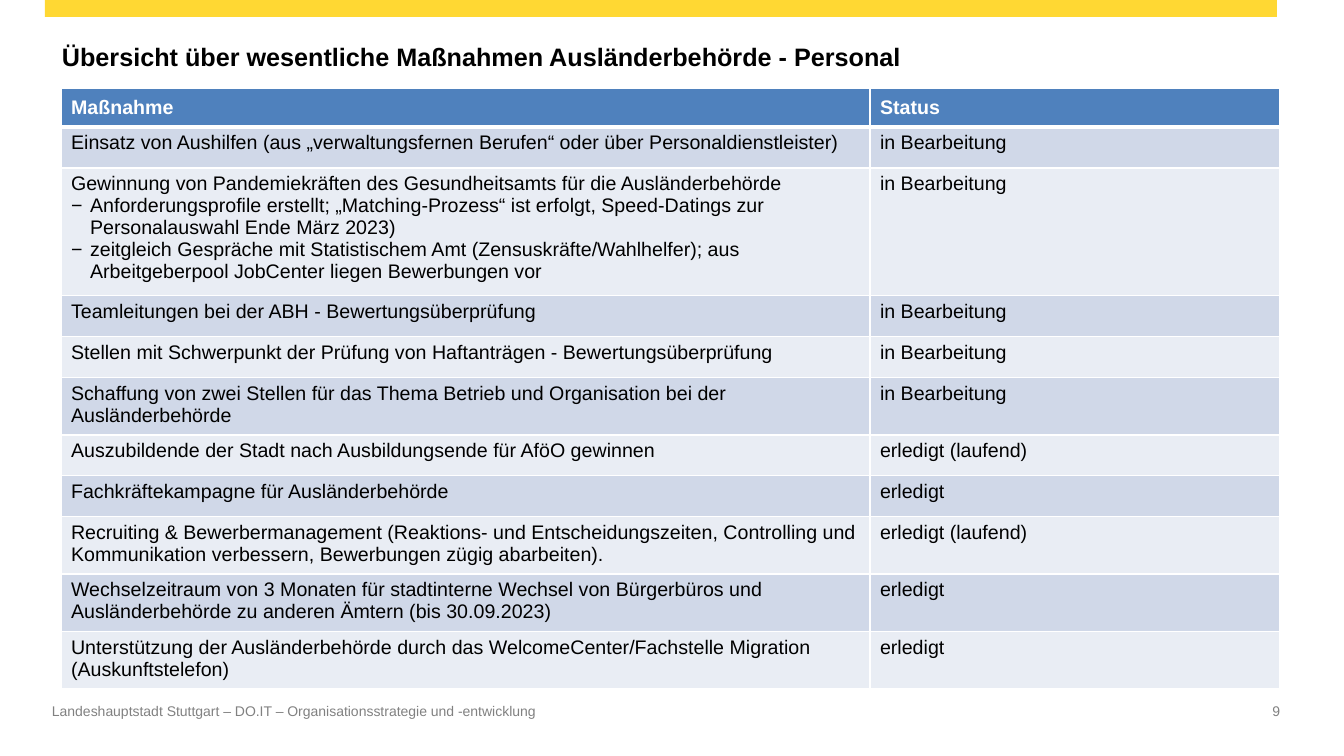
"""Build the slide with the overview of staffing measures."""
from dataclasses import dataclass

from lxml import etree
from pptx import Presentation
from pptx import util as u
from pptx.dml.color import RGBColor
from pptx.enum import shapes, text
from pptx.oxml import ns

PX = 914400 / 100.8
ROW_H = 41
HEADER = ("Maßnahme", "Status")
OPEN, DONE, ONGOING = "in Bearbeitung", "erledigt", "erledigt (laufend)"
MEASURES = [
    ("Einsatz von Aushilfen (aus „verwaltungsfernen Berufen“ oder über Personaldienstleister)", OPEN),
    ("Gewinnung von Pandemiekräften des Gesundheitsamts für die Ausländerbehörde\n"
     "Anforderungsprofile erstellt; „Matching-Prozess“ ist erfolgt, Speed-Datings zur "
     "Personalauswahl Ende März 2023)\n"
     "zeitgleich Gespräche mit Statistischem Amt (Zensuskräfte/Wahlhelfer); aus "
     "Arbeitgeberpool JobCenter liegen Bewerbungen vor", OPEN),
    ("Teamleitungen bei der ABH - Bewertungsüberprüfung", OPEN),
    ("Stellen mit Schwerpunkt der Prüfung von Haftanträgen - Bewertungsüberprüfung", OPEN),
    ("Schaffung von zwei Stellen für das Thema Betrieb und Organisation bei der "
     "Ausländerbehörde", OPEN),
    ("Auszubildende der Stadt nach Ausbildungsende für AföO gewinnen", ONGOING),
    ("Fachkräftekampagne für Ausländerbehörde", DONE),
    ("Recruiting & Bewerbermanagement (Reaktions- und Entscheidungszeiten, Controlling und "
     "Kommunikation verbessern, Bewerbungen zügig abarbeiten).", ONGOING),
    ("Wechselzeitraum von 3 Monaten für stadtinterne Wechsel von Bürgerbüros und "
     "Ausländerbehörde zu anderen Ämtern (bis 30.09.2023)", DONE),
    ("Unterstützung der Ausländerbehörde durch das WelcomeCenter/Fachstelle Migration "
     "(Auskunftstelefon)", DONE),
]


@dataclass(frozen=True)
class Theme:
    font: str = "Arial"
    title: int = 18
    body: int = 14
    small: int = 10
    ink: str = "000000"
    white: str = "FFFFFF"
    grey: str = "818181"
    accent: str = "FFD833"
    header: str = "4F81BD"
    bands: tuple = ("D0D8E8", "E9EDF4")


def px(*lengths):
    return [u.Emu(round(n * PX)) for n in lengths]


class Deck:
    def __init__(self, theme, width, height):
        self.theme = theme
        self.prs = Presentation()
        self.prs.slide_width, self.prs.slide_height = px(width, height)
        self.s = self.prs.slides.add_slide(self.prs.slide_layouts[6])

    def fill_text(self, tf, content, size, color, bold=False, align=None):
        fmt = {"name": self.theme.font, "size": u.Pt(size), "bold": bold}
        for i, line in enumerate(content.split("\n")):
            p = tf.paragraphs[0] if i == 0 else tf.add_paragraph()
            p.alignment = align
            if i:
                self.bullet(p)
            r = p.add_run()
            r.text = line
            for key, value in fmt.items():
                setattr(r.font, key, value)
            r.font.color.rgb = RGBColor.from_string(color)

    def bullet(self, p, indent=19):
        pPr = p._p.get_or_add_pPr()
        offset = px(indent)[0]
        pPr.set("marL", str(offset))
        pPr.set("indent", str(-offset))
        etree.SubElement(pPr, ns.qn("a:buFont"), typeface=self.theme.font)
        etree.SubElement(pPr, ns.qn("a:buChar"), char="−")

    def bar(self, x, y, w, h, color):
        sp = self.s.shapes.add_shape(shapes.MSO_SHAPE.RECTANGLE, *px(x, y, w, h))
        sp.shadow.inherit = False
        sp.fill.solid()
        sp.fill.fore_color.rgb = RGBColor.from_string(color)
        sp.line.fill.background()

    def label(self, x, y, w, h, content, frame=None, **style):
        tf = self.s.shapes.add_textbox(*px(x, y, w, h)).text_frame
        margins = dict.fromkeys(("margin_left", "margin_top", "margin_right", "margin_bottom"), 0)
        for key, value in {"word_wrap": True, **(margins if frame is None else frame)}.items():
            setattr(tf, key, value)
        self.fill_text(tf, content, **style)

    def borders(self, cell, top, bottom):
        tcPr = cell._tc.get_or_add_tcPr()
        for i, (tag, width) in enumerate({"lnL": 1, "lnR": 1, "lnT": top, "lnB": bottom}.items()):
            ln = etree.Element(ns.qn(f"a:{tag}"), w=str(u.Pt(width)))
            fill = etree.SubElement(ln, ns.qn("a:solidFill"))
            etree.SubElement(fill, ns.qn("a:srgbClr"), val=self.theme.white)
            tcPr.insert(i, ln)

    def table(self, x, y, widths, header_h, row_h, rows):
        t = self.theme
        height = header_h + row_h * (len(rows) - 1)
        frame = self.s.shapes.add_table(len(rows), len(widths), *px(x, y, sum(widths), height))
        tbl = frame.table
        for col, width in zip(tbl.columns, px(*widths)):
            col.width = width
        for i, row in enumerate(rows):
            head = i == 0
            tbl.rows[i].height = px(header_h if head else row_h)[0]
            for j, content in enumerate(row):
                cell = tbl.cell(i, j)
                cell.fill.solid()
                fill = t.header if head else t.bands[(i - 1) % 2]
                cell.fill.fore_color.rgb = RGBColor.from_string(fill)
                cell.vertical_anchor = text.MSO_ANCHOR.MIDDLE if head else text.MSO_ANCHOR.TOP
                self.borders(cell, top=3 if i == 1 else 1, bottom=3 if head else 1)
                self.fill_text(cell.text_frame, content, t.body, t.white if head else t.ink, bold=head)


def main():
    t = Theme()
    deck = Deck(t, 1344, 756)
    deck.bar(45, 0, 1232, 17, t.accent)
    deck.label(1169, 703, 111, 39, "9", size=t.small, color=t.grey, align=text.PP_ALIGN.RIGHT)
    deck.table(61, 88, (809, 410), 39, ROW_H, [HEADER, *MEASURES])
    deck.label(52, 703, 741, 39,
               "Landeshauptstadt Stuttgart – DO.IT – Organisationsstrategie und -entwicklung",
               size=t.small, color=t.grey)
    deck.label(52, 23, 929, 66, "Übersicht über wesentliche Maßnahmen Ausländerbehörde - Personal",
               frame={"vertical_anchor": text.MSO_ANCHOR.MIDDLE},
               size=t.title, color=t.ink, bold=True)
    deck.prs.save("out.pptx")


if __name__ == "__main__":
    main()
